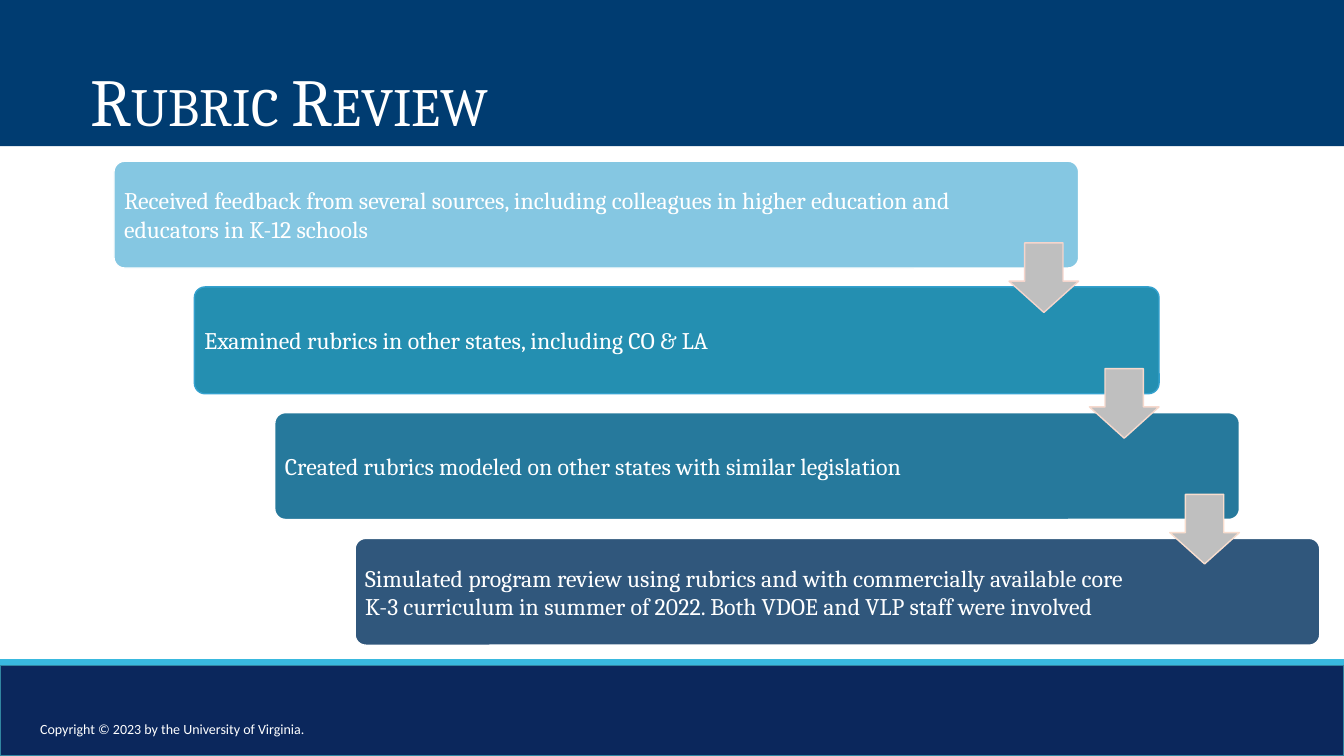
from dataclasses import dataclass

from lxml.etree import SubElement
from pptx import Presentation
from pptx.dml.color import RGBColor
from pptx.enum.shapes import MSO_CONNECTOR, MSO_SHAPE
from pptx.enum.text import MSO_ANCHOR, PP_ALIGN
from pptx.oxml.ns import qn
from pptx.shapes.autoshape import Shape
from pptx.slide import Slide
from pptx.text.text import TextFrame
from pptx.util import Inches, Length, Pt


@dataclass(frozen=True)
class Theme:
    header: str = "003C71"
    footer: str = "0B275C"
    footer_edge: str = "3186A1"
    rule: str = "39B9DF"
    arrow: str = "BFBFBF"
    white: str = "FFFFFF"
    serif: str = "Cambria"
    sans: str = "Calibri"
    title_size: float = 48
    step_size: float = 17
    footer_size: float = 10


@dataclass(frozen=True)
class Box:
    """Place on a grid of 100 columns by 100 rows."""
    col: float
    row: float
    cols: float
    rows: float

    def moved(self, steps: int) -> "Box":
        return Box(self.col + steps * STEP_COLS, self.row + steps * STEP_ROWS,
                   self.cols, self.rows)

    def lengths(self) -> tuple[Length, Length, Length, Length]:
        return x(self.col), y(self.row), x(self.cols), y(self.rows)


@dataclass(frozen=True)
class Step:
    text: str
    fill: str
    line: str
    margin_cols: float  # room kept free for the arrow
    arrow_line: str = ""  # empty when no arrow follows


THEME = Theme()
WIDTH, HEIGHT = Inches(13.33), Inches(7.5)
STEP_COLS, STEP_ROWS = 5.98, 16.63
FIRST_STEP = Box(8.48, 21.33, 71.78, 14.13)
FIRST_ARROW = Box(75.08, 32.13, 5.18, 9.2)
HEADER = Box(0, 0, 100, 19.33)
FOOTER = Box(0, 88, 100, 12)
COPYRIGHT = Box(2.25, 94.67, 21.45, 6.27)
RULE_ROW = 87.6

STEPS = [
    Step("Received feedback from several sources, including colleagues in higher "
         "education and educators in K-12 schools", "85C7E2", "FFFFFF", 9.3, "F5D5CC"),
    Step("Examined rubrics in other states, including CO & LA",
         "248FB1", "34A1CE", 11.7, "F6D9CD"),
    Step("Created rubrics modeled on other states with similar legislation",
         "26799C", "FFFFFF", 11.7, "F8DDCE"),
    Step("Simulated program review using rubrics and with commercially available core "
         "K-3 curriculum in summer of 2022. Both VDOE and VLP staff were involved",
         "30577C", "FFFFFF", 11.7),
]


def x(cols: float) -> Length:
    return Length(round(WIDTH * cols / 100))


def y(rows: float) -> Length:
    return Length(round(HEIGHT * rows / 100))


def rgb(color: str) -> RGBColor:
    return RGBColor.from_string(color)


def add_block(s: Slide, kind: MSO_SHAPE, box: Box, fill: str, line: str = "") -> Shape:
    sp = s.shapes.add_shape(kind, *box.lengths())
    sp.shadow.inherit = False
    sp.fill.solid()
    sp.fill.fore_color.rgb = rgb(fill)
    if line:
        sp.line.color.rgb = rgb(line)
        sp.line.width = Pt(1)
    else:
        sp.line.fill.background()
    return sp


def set_text(tf: TextFrame, text: str, font: str, size: float) -> None:
    tf.word_wrap = True
    tf.text = text
    p = tf.paragraphs[0]
    p.alignment = PP_ALIGN.LEFT
    r = p.runs[0]
    r.font.name = font
    r.font.size = Pt(size)
    r.font.color.rgb = rgb(THEME.white)


def add_footer(s: Slide) -> None:
    add_block(s, MSO_SHAPE.RECTANGLE, FOOTER, THEME.footer, THEME.footer_edge)
    rule = s.shapes.add_connector(MSO_CONNECTOR.STRAIGHT, 0, y(RULE_ROW), WIDTH, y(RULE_ROW))
    rule.line.color.rgb = rgb(THEME.rule)
    rule.line.width = Pt(4)
    SubElement(rule._element.spPr, qn("a:effectLst"))
    tb = s.shapes.add_textbox(*COPYRIGHT.lengths())
    set_text(tb.text_frame, "Copyright © 2023 by the University of Virginia.",
             THEME.sans, THEME.footer_size)


def add_step(s: Slide, step: Step, index: int) -> None:
    sp = add_block(s, MSO_SHAPE.ROUNDED_RECTANGLE, FIRST_STEP.moved(index),
                   step.fill, step.line)
    sp.adjustments[0] = 0.1
    tf = sp.text_frame
    tf.vertical_anchor = MSO_ANCHOR.MIDDLE
    tf.margin_left = tf.margin_top = tf.margin_bottom = Pt(5)
    tf.margin_right = x(step.margin_cols)
    set_text(tf, step.text, THEME.serif, THEME.step_size)


def add_arrow(s: Slide, line: str, index: int) -> None:
    sp = add_block(s, MSO_SHAPE.DOWN_ARROW, FIRST_ARROW.moved(index), THEME.arrow, line)
    sp.adjustments[0] = 0.45  # head length
    sp.adjustments[0], sp.adjustments[1] = 0.55, 0.45  # shaft width, head length


def add_header(s: Slide) -> None:
    sp = add_block(s, MSO_SHAPE.RECTANGLE, HEADER, THEME.header)
    tf = sp.text_frame
    tf.vertical_anchor = MSO_ANCHOR.BOTTOM
    tf.margin_left = x(6.75)
    set_text(tf, "Rubric Review", THEME.serif, THEME.title_size)
    p = tf.paragraphs[0]
    p.line_spacing = 0.9
    p.runs[0]._r.get_or_add_rPr().set("cap", "small")


def main() -> None:
    prs = Presentation()
    prs.slide_width, prs.slide_height = WIDTH, HEIGHT
    s = prs.slides.add_slide(prs.slide_layouts[6])

    add_footer(s)
    # Staircase of steps, then the arrows lying over them
    for i, step in enumerate(STEPS):
        add_step(s, step, i)
    for i, step in enumerate(STEPS):
        if step.arrow_line:
            add_arrow(s, step.arrow_line, i)
    add_header(s)

    prs.save("out.pptx")


if __name__ == "__main__":
    main()
